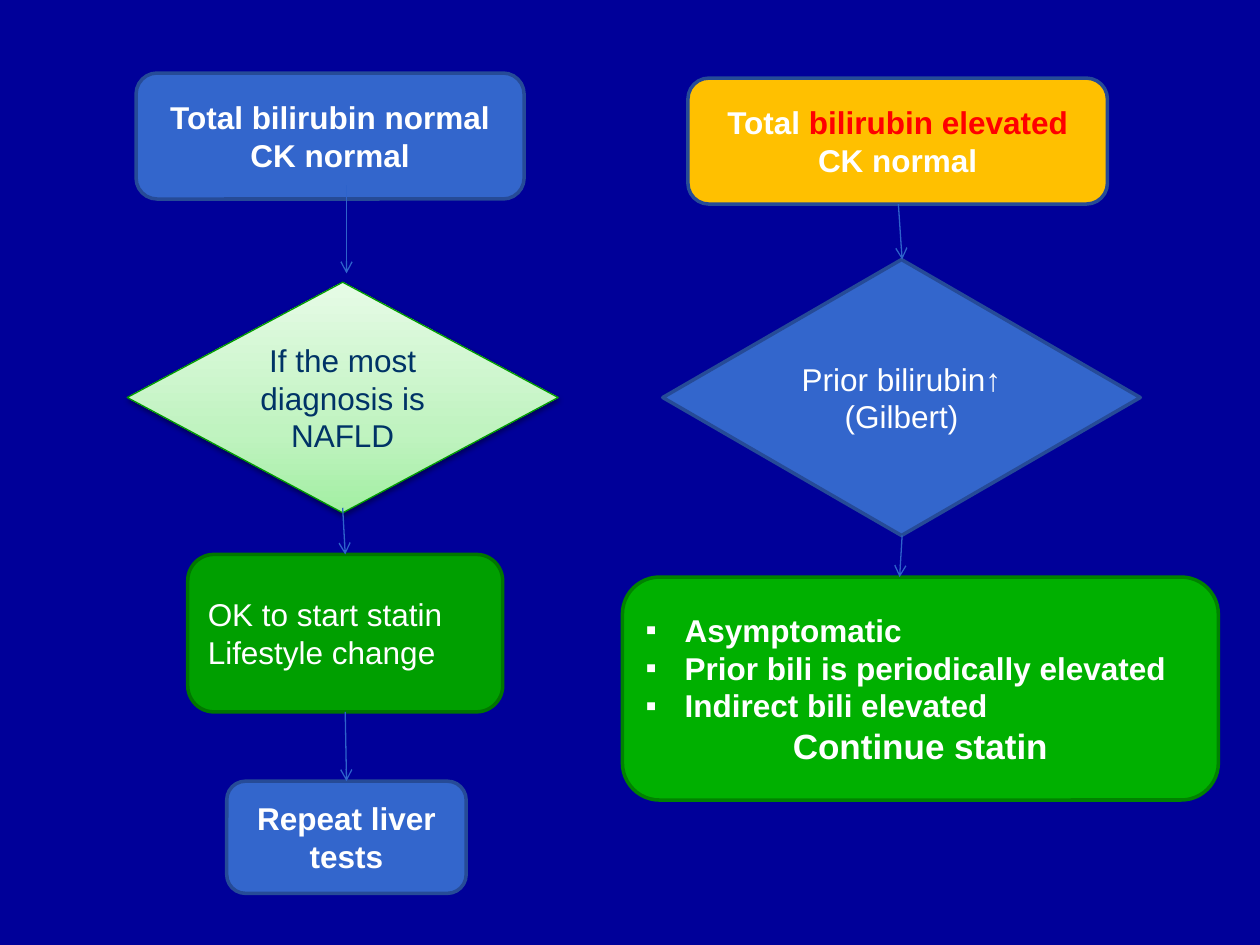
from copy import deepcopy

from lxml import etree
from pptx import Presentation
from pptx.dml.color import RGBColor
from pptx.enum.shapes import MSO_CONNECTOR, MSO_SHAPE
from pptx.enum.text import MSO_ANCHOR, PP_ALIGN
from pptx.oxml.ns import qn
from pptx.util import Inches, Pt

ROUNDED, DECISION = MSO_SHAPE.ROUNDED_RECTANGLE, MSO_SHAPE.FLOWCHART_DECISION
STRAIGHT = MSO_CONNECTOR.STRAIGHT
LEFT, CENTER, MIDDLE = PP_ALIGN.LEFT, PP_ALIGN.CENTER, MSO_ANCHOR.MIDDLE

COLORS = {
    "background": "000099", "blue": "3366CC", "blue_edge": "264B97",
    "amber": "FFC000", "green": "009F00", "green_edge": "007600",
    "bright_green": "00B000", "bright_green_edge": "008200",
    "mint_edge": "009B00", "navy": "003366", "white": "FFFFFF",
    "red": "FF0000", "arrow": "2E63CB", "shadow": "000000",
}
MINT_STOPS = [(0, "A3EFA3"), (0.35, "C0F3C0"), (1, "E6FBE6")]
BULLET = "▪"

NODES = [
    dict(kind=ROUNDED, box=(1.08, 0.58, 3.08, 1), fill="blue", edge="blue_edge",
         bold=True, lines=["Total bilirubin normal", "CK normal"]),
    dict(kind=ROUNDED, box=(5.46, 0.62, 3.33, 1), fill="amber", edge="blue_edge", bold=True,
         lines=[[("Total ", "white"), ("bilirubin elevated", "red")], "CK normal"]),
    dict(kind=DECISION, box=(1.01, 2.24, 3.42, 1.83), fill="mint", edge="mint_edge",
         edge_width=0.75, color="navy", lines=["If the most diagnosis is NAFLD"]),
    dict(kind=DECISION, box=(5.26, 2.06, 3.79, 2.19), fill="blue", edge="blue_edge",
         lines=["Prior bilirubin↑ (Gilbert)"]),
    dict(kind=ROUNDED, box=(1.49, 4.4, 2.5, 1.25), fill="green", edge="green_edge",
         align=LEFT, lines=["OK to start statin", "Lifestyle change"]),
    dict(kind=ROUNDED, box=(1.8, 6.2, 1.9, 0.89), fill="blue", edge="blue_edge",
         bold=True, lines=["Repeat liver tests"]),
    dict(kind=ROUNDED, box=(4.94, 4.58, 4.73, 1.77), fill="bright_green",
         edge="bright_green_edge", bold=True,
         bullets=["Asymptomatic", "Prior bili is periodically elevated",
                  "Indirect bili elevated"],
         lines=["Continue statin"], size=20),
]
ARROWS = [
    (2.75, 1.47, 2.75, 2.17), (2.72, 4.03, 2.74, 4.4), (2.74, 5.65, 2.75, 6.2),
    (7.13, 1.62, 7.16, 2.06), (7.16, 4.25, 7.14, 4.58),
]


def rgb(name):
    return RGBColor.from_string(COLORS[name])


def fill_mint(shape):
    shape.fill.gradient()
    shape.fill.gradient_angle = 90
    stop_list = shape._element.spPr.find(".//" + qn("a:gsLst"))
    stop_list.insert(1, deepcopy(stop_list[0]))
    for stop, (position, color) in zip(shape.fill.gradient_stops, MINT_STOPS):
        stop.position = position
        stop.color.rgb = RGBColor.from_string(color)
    effects = shape._element.spPr.find(qn("a:effectLst"))
    shadow = etree.SubElement(effects, qn("a:outerShdw"), blurRad=str(Pt(3.1)),
                              dist=str(Pt(1.6)), dir="5400000", rotWithShape="0")
    color = etree.SubElement(shadow, qn("a:srgbClr"), val=COLORS["shadow"])
    etree.SubElement(color, qn("a:alpha"), val="38000")


def add_bullet(paragraph):
    properties = paragraph._p.get_or_add_pPr()
    properties.set("marL", str(Inches(0.31)))
    properties.set("indent", str(-Inches(0.31)))
    etree.SubElement(properties, qn("a:buFont"), typeface="Arial")
    etree.SubElement(properties, qn("a:buChar"), char=BULLET)


def write_text(shape, node):
    frame = shape.text_frame
    frame.word_wrap = True
    frame.vertical_anchor = MIDDLE
    color = node.get("color", "white")
    rows = [(text, True) for text in node.get("bullets", [])]
    rows += [(text, False) for text in node["lines"]]
    for index, (content, bulleted) in enumerate(rows):
        paragraph = frame.add_paragraph() if index else frame.paragraphs[0]
        paragraph.alignment = LEFT if bulleted else node.get("align", CENTER)
        if bulleted:
            add_bullet(paragraph)
        paragraph.font.name = "Arial"
        paragraph.font.size = Pt(18 if bulleted else node.get("size", 18))
        paragraph.font.bold = node.get("bold", False)
        paragraph.font.color.rgb = rgb(color)
        parts = [(content, color)] if isinstance(content, str) else content
        for text, run_color in parts:
            run = paragraph.add_run()
            run.text = text
            run.font.color.rgb = rgb(run_color)


def add_node(slide, node):
    shape = slide.shapes.add_shape(node["kind"], *map(Inches, node["box"]))
    shape.shadow.inherit = False
    if node["fill"] == "mint":
        fill_mint(shape)
    else:
        shape.fill.solid()
        shape.fill.fore_color.rgb = rgb(node["fill"])
    shape.line.color.rgb = rgb(node["edge"])
    shape.line.width = Pt(node.get("edge_width", 2))
    write_text(shape, node)


def add_arrow(slide, ends):
    connector = slide.shapes.add_connector(STRAIGHT, *map(Inches, ends))
    connector.line.color.rgb = rgb("arrow")
    connector.line.width = Pt(0.75)
    etree.SubElement(connector.line._get_or_add_ln(), qn("a:tailEnd"), type="arrow")
    etree.SubElement(connector._element.spPr, qn("a:effectLst"))


def main():
    presentation = Presentation()
    presentation.slide_width, presentation.slide_height = Inches(10), Inches(7.5)
    slide = presentation.slides.add_slide(presentation.slide_layouts[6])
    slide.background.fill.solid()
    slide.background.fill.fore_color.rgb = rgb("background")
    for node in NODES:
        add_node(slide, node)
    for ends in ARROWS:
        add_arrow(slide, ends)
    presentation.save("out.pptx")


if __name__ == "__main__":
    main()
